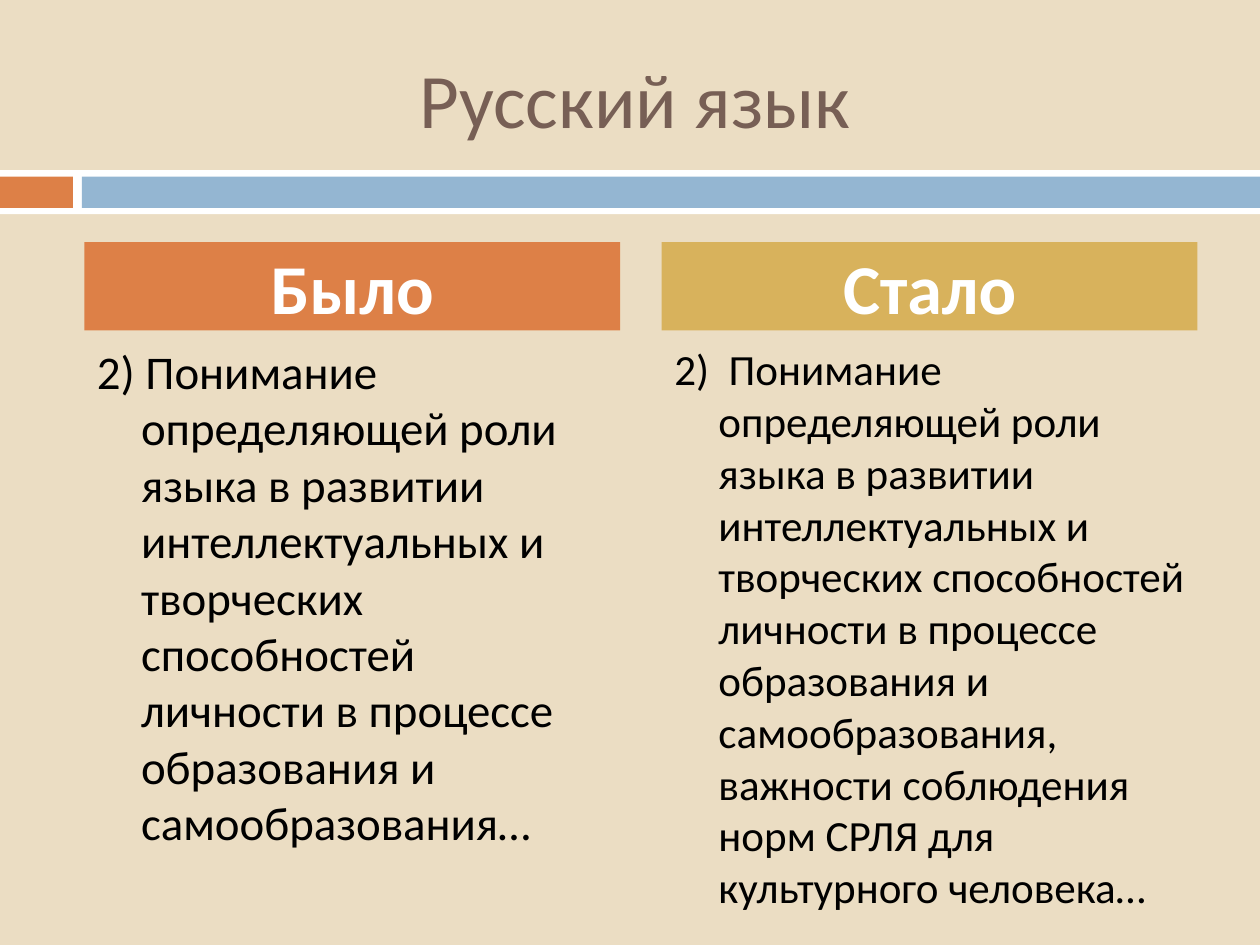
from dataclasses import dataclass

from lxml.etree import SubElement
from pptx import Presentation
from pptx.dml.color import RGBColor
from pptx.enum.shapes import MSO_SHAPE
from pptx.enum.text import MSO_ANCHOR, MSO_AUTO_SIZE, PP_ALIGN
from pptx.oxml.ns import qn
from pptx.util import Cm, Pt


@dataclass(frozen=True)
class Theme:
    font: str = "Calibri"
    background: str = "EBDDC3"
    title: str = "775F55"
    text: str = "000000"
    white: str = "FFFFFF"
    orange: str = "DD8047"
    blue: str = "94B6D2"
    gold: str = "D8B25C"
    title_size: float = 44
    header_size: float = 40
    before_size: float = 26.8
    after_size: float = 24.6


THEME = Theme()
COMPARISON_LAYOUT = 4


def paint(fill, color):
    fill.solid()
    fill.fore_color.rgb = RGBColor.from_string(color)


def place(part, left, top, width, height):
    part.left, part.top = Cm(left), Cm(top)
    part.width, part.height = Cm(width), Cm(height)


def write(placeholder, text, size, color, anchor, align, bold=False):
    frame = placeholder.text_frame
    frame.text = text
    frame.word_wrap = True
    frame.auto_size = MSO_AUTO_SIZE.NONE
    frame.vertical_anchor = anchor
    paragraph = frame.paragraphs[0]
    paragraph.alignment = align
    font = paragraph.font
    font.name, font.size, font.bold = THEME.font, Pt(size), bold
    font.color.rgb = RGBColor.from_string(color)
    return paragraph


def add_title(title, text, left, top, width, height):
    place(title, left, top, width, height)
    write(title, text, THEME.title_size, THEME.title,
          MSO_ANCHOR.MIDDLE, PP_ALIGN.CENTER)


def add_band(slide, left, top, width, height):
    """White band with a short orange and a long blue stripe."""
    margin, accent, stripe_start = 0.13, 1.47, 1.65
    stripe_top, stripe_height = top + margin, height - 2 * margin
    for x, y, w, h, color in (
        (left, top, width, height, THEME.white),
        (left, stripe_top, accent, stripe_height, THEME.orange),
        (left + stripe_start, stripe_top, width - stripe_start,
         stripe_height, THEME.blue),
    ):
        bar = slide.shapes.add_shape(
            MSO_SHAPE.RECTANGLE, Cm(x), Cm(y), Cm(w), Cm(h))
        bar.shadow.inherit = False
        paint(bar.fill, color)
        bar.line.fill.background()


def add_column(header, body, heading, text, color, size,
               left, top, width, height):
    """Coloured heading above one numbered paragraph."""
    header_height, body_offset, indent = 1.78, 1.9, 0.89

    # Heading
    place(header, left, top, width, header_height)
    paint(header.fill, color)
    write(header, heading, THEME.header_size, THEME.white,
          MSO_ANCHOR.MIDDLE, PP_ALIGN.CENTER, bold=True).space_before = Pt(7)

    # Paragraph with a hanging indent and no bullet
    place(body, left, top + body_offset, width, height - body_offset)
    paragraph = write(body, text, size, THEME.text,
                      MSO_ANCHOR.TOP, PP_ALIGN.LEFT)
    paragraph.space_before = Pt(7)
    paragraph.line_spacing = Pt(round(size * 1.203, 1))
    properties = paragraph._p.get_or_add_pPr()
    properties.set("marL", str(Cm(indent)))
    properties.set("indent", str(-Cm(indent)))
    bullet = SubElement(properties, qn("a:buNone"))
    properties.find(qn("a:defRPr")).addprevious(bullet)


def main():
    presentation = Presentation()
    presentation.slide_width, presentation.slide_height = Cm(25.4), Cm(19.05)
    slide = presentation.slides.add_slide(
        presentation.slide_layouts[COMPARISON_LAYOUT])
    paint(slide.background.fill, THEME.background)
    title, *parts = slide.placeholders

    add_band(slide, 0, 3.43, 25.4, 0.89)
    add_title(title, "Русский язык", 1.48, 0.76, 22.66, 2.41)

    shared = ("Понимание определяющей роли языка в развитии интеллектуальных "
              "и творческих способностей личности в процессе образования "
              "и самообразования")
    columns = (
        ("Было", f"2) {shared}…", THEME.orange, THEME.before_size),
        ("Стало", f"2)  {shared}, важности соблюдения норм СРЛЯ "
                  "для культурного человека…", THEME.gold, THEME.after_size),
    )
    width, gap = 10.8, 0.84
    for index, content in enumerate(columns):
        header, body = parts[2 * index:2 * index + 2]
        add_column(header, body, *content,
                   1.7 + index * (width + gap), 4.88, width, 11.86)

    presentation.save("out.pptx")


if __name__ == "__main__":
    main()
